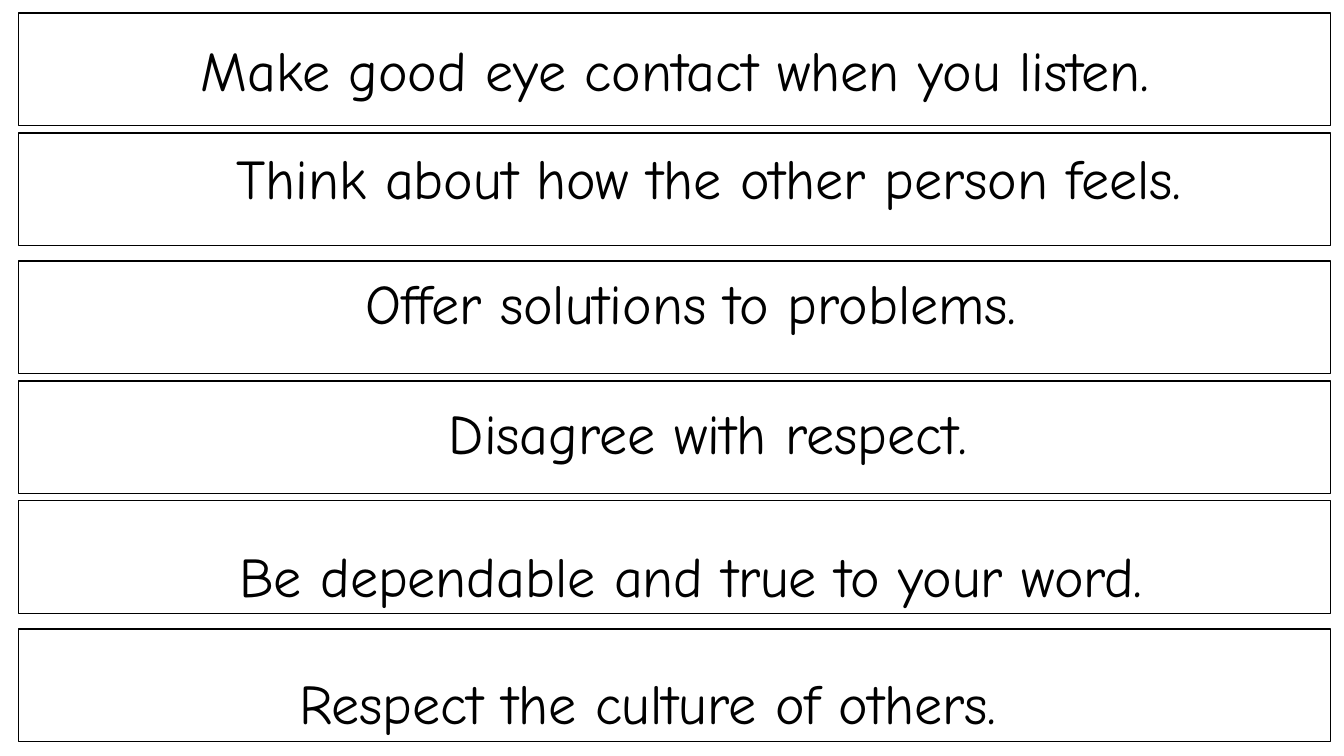
"""Build a slide of six framed sentence strips about respectful behaviour."""
from dataclasses import dataclass

from pptx import Presentation
from pptx import util as u
from pptx.dml import color
from pptx.enum import shapes, text
from pptx.slide import Slide

COLORS = {"paper": "FFFFFF", "ink": "000000"}
FONT = "Comic Neue"
FRAME_LEFT, FRAME_WIDTH, FRAME_HEIGHT = 0.46, 33.07, 2.84
SENTENCE_WIDTH, SENTENCE_HEIGHT = 32.64, 1.96


@dataclass(frozen=True)
class Strip:
    sentence: str
    frame_top: float
    sentence_left: float
    sentence_top: float


STRIPS = [
    Strip("Make good eye contact when you listen.", 0.33, 0.69, 0.76),
    Strip("Think about how the other person feels.", 3.35, 1.55, 3.48),
    Strip("Offer solutions to problems.", 6.58, 1.09, 6.65),
    Strip("Disagree with respect.", 9.6, 1.52, 9.93),
    Strip("Be dependable and true to your word.", 12.62, 1.09, 13.51),
    Strip("Respect the culture of others.", 15.85, 0, 16.71),
]


def rgb(name: str) -> color.RGBColor:
    return color.RGBColor.from_string(COLORS[name])


def draw_frame(slide: Slide, strip: Strip) -> None:
    frame = slide.shapes.add_shape(
        shapes.MSO_SHAPE.RECTANGLE,
        u.Cm(FRAME_LEFT), u.Cm(strip.frame_top),
        u.Cm(FRAME_WIDTH), u.Cm(FRAME_HEIGHT),
    )
    frame.shadow.inherit = False
    frame.fill.solid()
    frame.fill.fore_color.rgb = rgb("paper")
    frame.line.color.rgb = rgb("ink")
    frame.line.width = u.Pt(1)


def draw_sentence(slide: Slide, strip: Strip) -> None:
    sentence = slide.shapes.add_textbox(
        u.Cm(strip.sentence_left), u.Cm(strip.sentence_top),
        u.Cm(SENTENCE_WIDTH), u.Cm(SENTENCE_HEIGHT),
    ).text_frame
    sentence.word_wrap = True
    sentence.auto_size = text.MSO_AUTO_SIZE.SHAPE_TO_FIT_TEXT
    sentence.text = strip.sentence
    line = sentence.paragraphs[0]
    line.alignment = text.PP_ALIGN.CENTER
    font = line.runs[0].font
    font.name = FONT
    font.size = u.Pt(40)
    font.color.rgb = rgb("ink")


def main() -> None:
    deck = Presentation()
    deck.slide_width, deck.slide_height = u.Cm(33.87), u.Cm(19.05)
    slide = deck.slides.add_slide(deck.slide_layouts[6])
    for strip in STRIPS:
        draw_frame(slide, strip)
    for strip in STRIPS:
        draw_sentence(slide, strip)
    deck.save("out.pptx")


if __name__ == "__main__":
    main()
